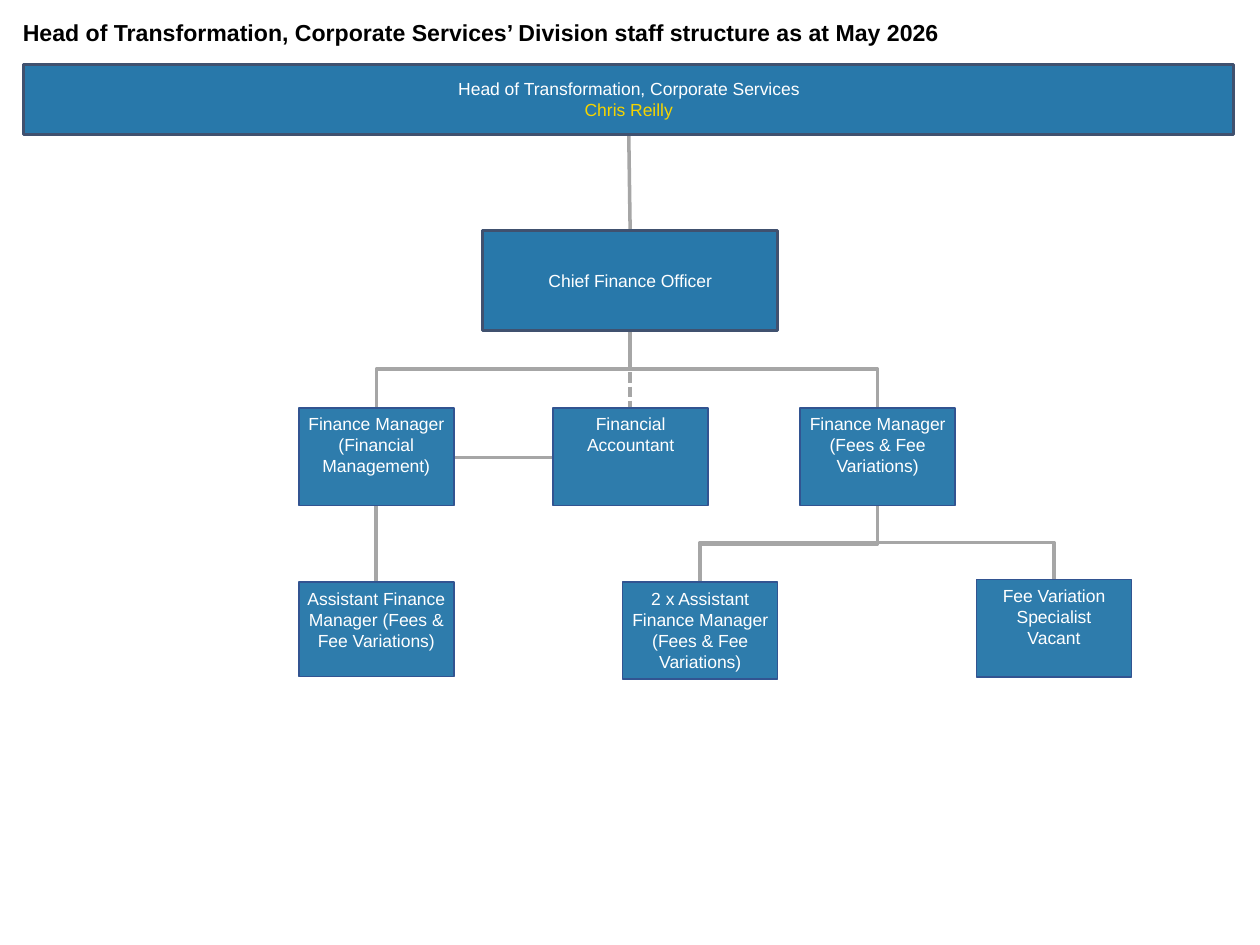
from collections import namedtuple

from lxml import etree
from pptx import Presentation
from pptx.dml.color import RGBColor
from pptx.enum.dml import MSO_LINE
from pptx.enum.shapes import MSO_CONNECTOR, MSO_SHAPE
from pptx.enum.text import MSO_ANCHOR, MSO_AUTO_SIZE, PP_ALIGN
from pptx.oxml.ns import qn
from pptx.util import Pt

STRAIGHT, ELBOW = MSO_CONNECTOR.STRAIGHT, MSO_CONNECTOR.ELBOW
RECTANGLE = MSO_SHAPE.RECTANGLE
TOP, MIDDLE = MSO_ANCHOR.TOP, MSO_ANCHOR.MIDDLE
LEFT, CENTER = PP_ALIGN.LEFT, PP_ALIGN.CENTER
DASH = MSO_LINE.SQUARE_DOT
NO_AUTOFIT = MSO_AUTO_SIZE.NONE

BLUE = RGBColor(0x28, 0x78, 0xAA)
NAVY = RGBColor(0x32, 0x54, 0x91)
SLATE = RGBColor(0x40, 0x51, 0x6F)
GREY = RGBColor(0xA6, 0xA6, 0xA6)
YELLOW = RGBColor(0xF5, 0xD4, 0x00)
WHITE = RGBColor(0xFF, 0xFF, 0xFF)
BLACK = RGBColor(0, 0, 0)
FONT = "Arial"

Box = namedtuple("Box", "left top width height")

TITLE = Box(5.8, 10.1, 564.5, 20.9)
HEAD = Box(13.7, 36.7, 691.2, 40.3)
CFO = Box(275.9, 131.8, 168.4, 56.9)
CARD_WIDTH, CARD_HEIGHT = 88.6, 55.6
MANAGER_TOP, TEAM_TOP = 233.3, 332.6
MANAGEMENT = Box(170.7, MANAGER_TOP, CARD_WIDTH, CARD_HEIGHT)
ACCOUNTANT = Box(316.1, MANAGER_TOP, CARD_WIDTH, CARD_HEIGHT)
FEES = Box(457.2, MANAGER_TOP, CARD_WIDTH, CARD_HEIGHT)
ASSISTANT = Box(MANAGEMENT.left, TEAM_TOP, CARD_WIDTH, 54)
FEE_ASSISTANTS = Box(355.8, TEAM_TOP, CARD_WIDTH, CARD_HEIGHT)
SPECIALIST = Box(558, 331.2, CARD_WIDTH, CARD_HEIGHT)


def top_center(box):
    return box.left + box.width / 2, box.top


def bottom_center(box):
    return box.left + box.width / 2, box.top + box.height


def add_run(paragraph, words, size, color, bold=False):
    run = paragraph.add_run()
    run.text = words
    run.font.name = FONT
    run.font.size = Pt(size)
    run.font.bold = bold
    run.font.color.rgb = color


def draw_title(slide, box):
    title = slide.shapes.title
    title.left, title.top, title.width, title.height = map(Pt, box)
    frame = title.text_frame
    frame.word_wrap = True
    frame.auto_size = NO_AUTOFIT
    frame.vertical_anchor = MIDDLE
    paragraph = frame.paragraphs[0]
    paragraph.alignment = LEFT
    paragraph.line_spacing = 0.7
    add_run(paragraph, "Head of Transformation, Corporate Services’ Division "
            "staff structure as at May 2026", 13.2, BLACK, bold=True)


def draw_role(slide, box, lines, border, border_width, anchor, insets):
    role = slide.shapes.add_shape(RECTANGLE, *map(Pt, box))
    role.shadow.inherit = False
    role.fill.solid()
    role.fill.fore_color.rgb = BLUE
    role.line.color.rgb = border
    role.line.width = Pt(border_width)
    frame = role.text_frame
    frame.word_wrap = True
    frame.vertical_anchor = anchor
    frame.margin_left = frame.margin_right = Pt(insets[0])
    frame.margin_top = frame.margin_bottom = Pt(insets[1])
    for index, (words, color) in enumerate(lines):
        paragraph = frame.add_paragraph() if index else frame.paragraphs[0]
        paragraph.alignment = CENTER
        add_run(paragraph, words, 10, color)
    return role


def draw_leader(slide, box, *lines):
    draw_role(slide, box, lines, SLATE, 1.75, MIDDLE, (7.2, 3.6))


def draw_card(slide, box, *lines, insets=(2.9, 2.9)):
    card = draw_role(slide, box, [(words, WHITE) for words in lines],
                     NAVY, 1, TOP, insets)
    fill_color = card.fill._xPr.find(qn("a:solidFill"))[0]
    etree.SubElement(fill_color, qn("a:alpha")).set("val", "97000")


def draw_link(slide, kind, start, end):
    link = slide.shapes.add_connector(kind, *map(Pt, (*start, *end)))
    link.line.color.rgb = GREY
    link.line.width = Pt(2)
    etree.SubElement(link._element.spPr, qn("a:effectLst"))
    return link


def draw_branch(slide, start, end):
    middle_x, middle_y = (start[0] + end[0]) / 2, (start[1] + end[1]) / 2
    half_drop = (end[1] - start[1]) / 2
    half_span = abs(end[0] - start[0]) / 2
    leftward = end[0] < start[0]
    reach = -half_drop if leftward else half_drop
    branch = draw_link(slide, ELBOW,
                       (middle_x + reach, middle_y - half_span),
                       (middle_x - reach, middle_y + half_span))
    degrees = 90 if leftward else 270
    branch._element.spPr.find(qn("a:xfrm")).set("rot", str(degrees * 60000))
    return branch


def draw_links(slide):
    peer_y = 261.4
    draw_link(slide, STRAIGHT, (MANAGEMENT.left + CARD_WIDTH, peer_y),
              (ACCOUNTANT.left, peer_y))
    draw_link(slide, STRAIGHT, bottom_center(MANAGEMENT), top_center(ASSISTANT))
    draw_link(slide, STRAIGHT, bottom_center(HEAD), top_center(CFO))
    cfo_exit = bottom_center(CFO)
    dashed = draw_branch(slide, cfo_exit, (cfo_exit[0], MANAGER_TOP))
    dashed.line.dash_style = DASH
    for manager in (FEES, MANAGEMENT):
        draw_branch(slide, cfo_exit, top_center(manager))
    fee_assistants_x = top_center(FEE_ASSISTANTS)[0]
    for entry in ((fee_assistants_x, SPECIALIST.top), top_center(SPECIALIST),
                  top_center(FEE_ASSISTANTS)):
        draw_branch(slide, bottom_center(FEES), entry)


def main():
    deck = Presentation()
    deck.slide_width, deck.slide_height = Pt(720), Pt(540)
    slide = deck.slides.add_slide(deck.slide_layouts[5])
    draw_links(slide)
    draw_title(slide, TITLE)
    draw_leader(slide, HEAD, ("Head of Transformation, Corporate Services", WHITE),
                ("Chris Reilly", YELLOW))
    draw_leader(slide, CFO, ("Chief Finance Officer", WHITE))
    draw_card(slide, MANAGEMENT, "Finance Manager (Financial Management)")
    draw_card(slide, ACCOUNTANT, "Financial Accountant")
    draw_card(slide, FEES, "Finance Manager (Fees & Fee Variations)")
    draw_card(slide, ASSISTANT, "Assistant Finance Manager (Fees & Fee Variations)",
              insets=(1.4, 3.6))
    draw_card(slide, FEE_ASSISTANTS,
              "2 x Assistant Finance Manager (Fees & Fee Variations)",
              insets=(1.4, 3.6))
    draw_card(slide, SPECIALIST, "Fee Variation Specialist", "Vacant")
    deck.save("out.pptx")


if __name__ == "__main__":
    main()
